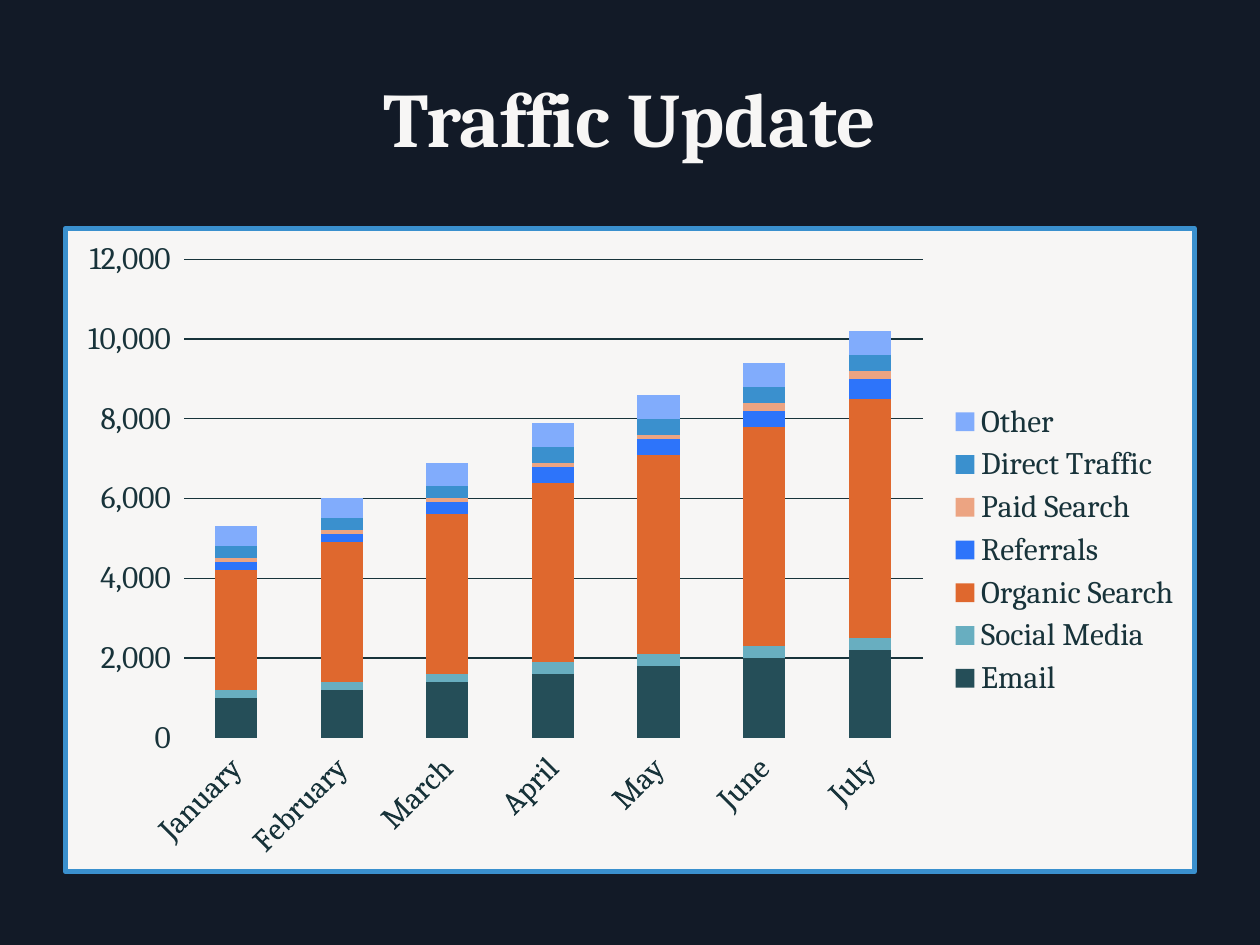
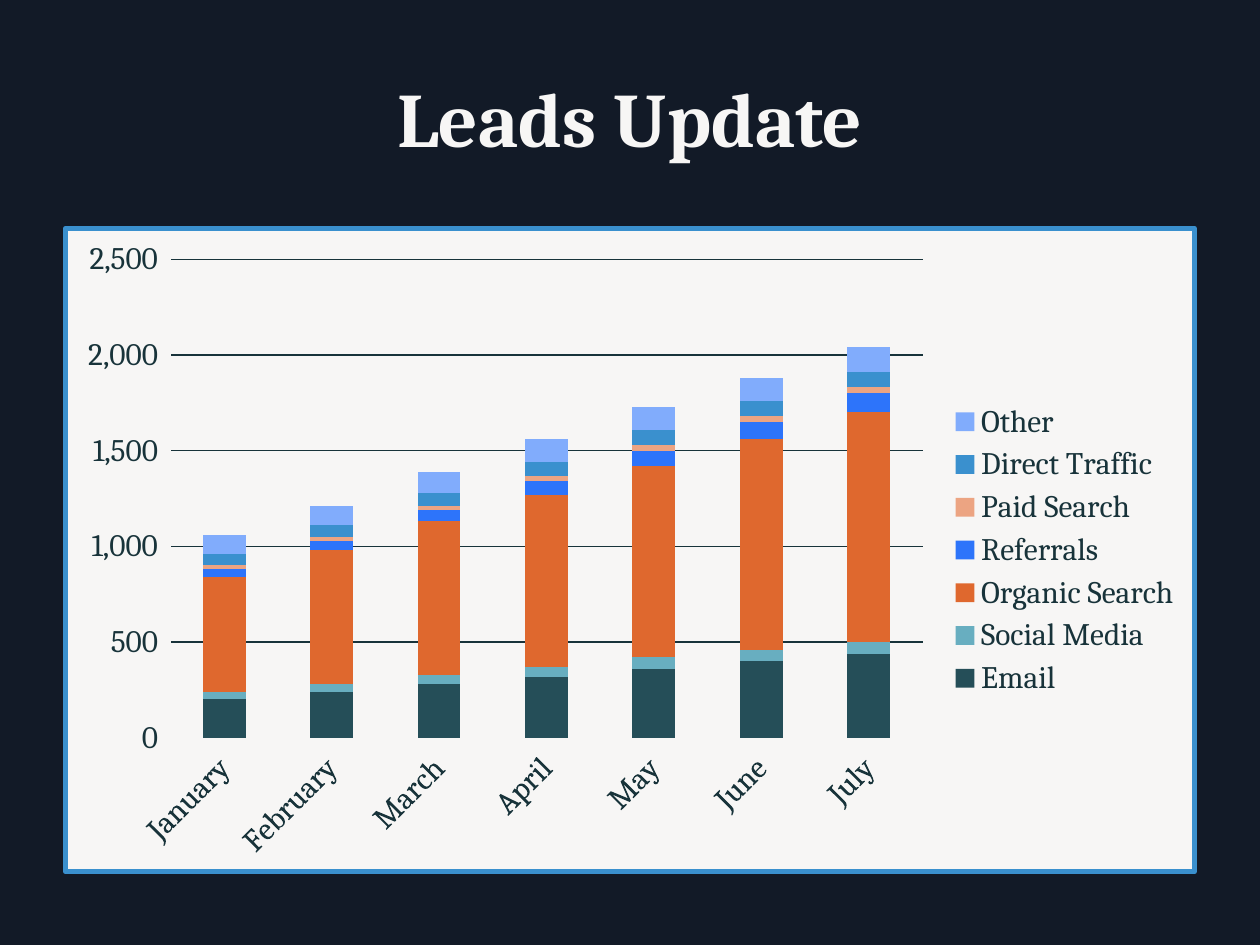
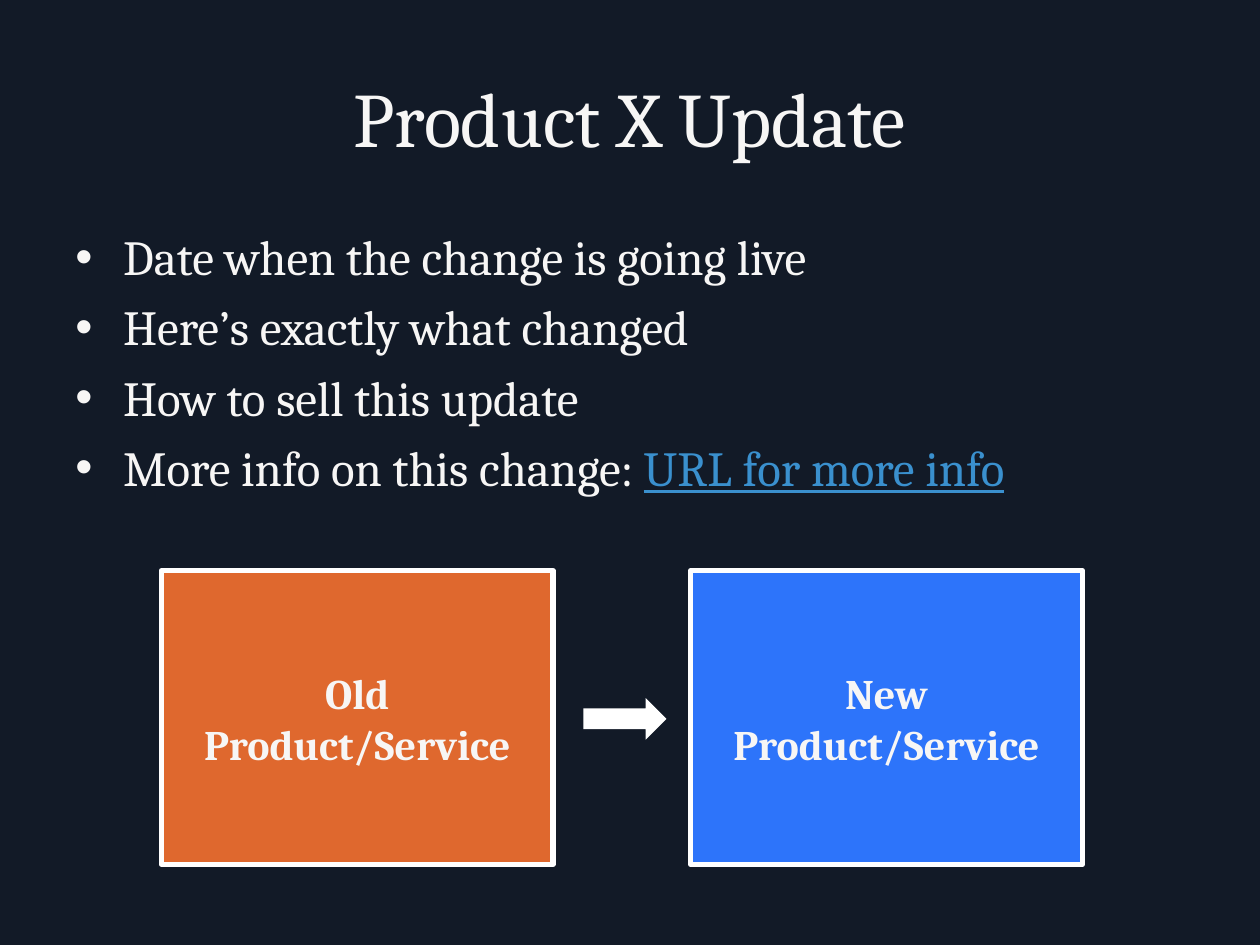
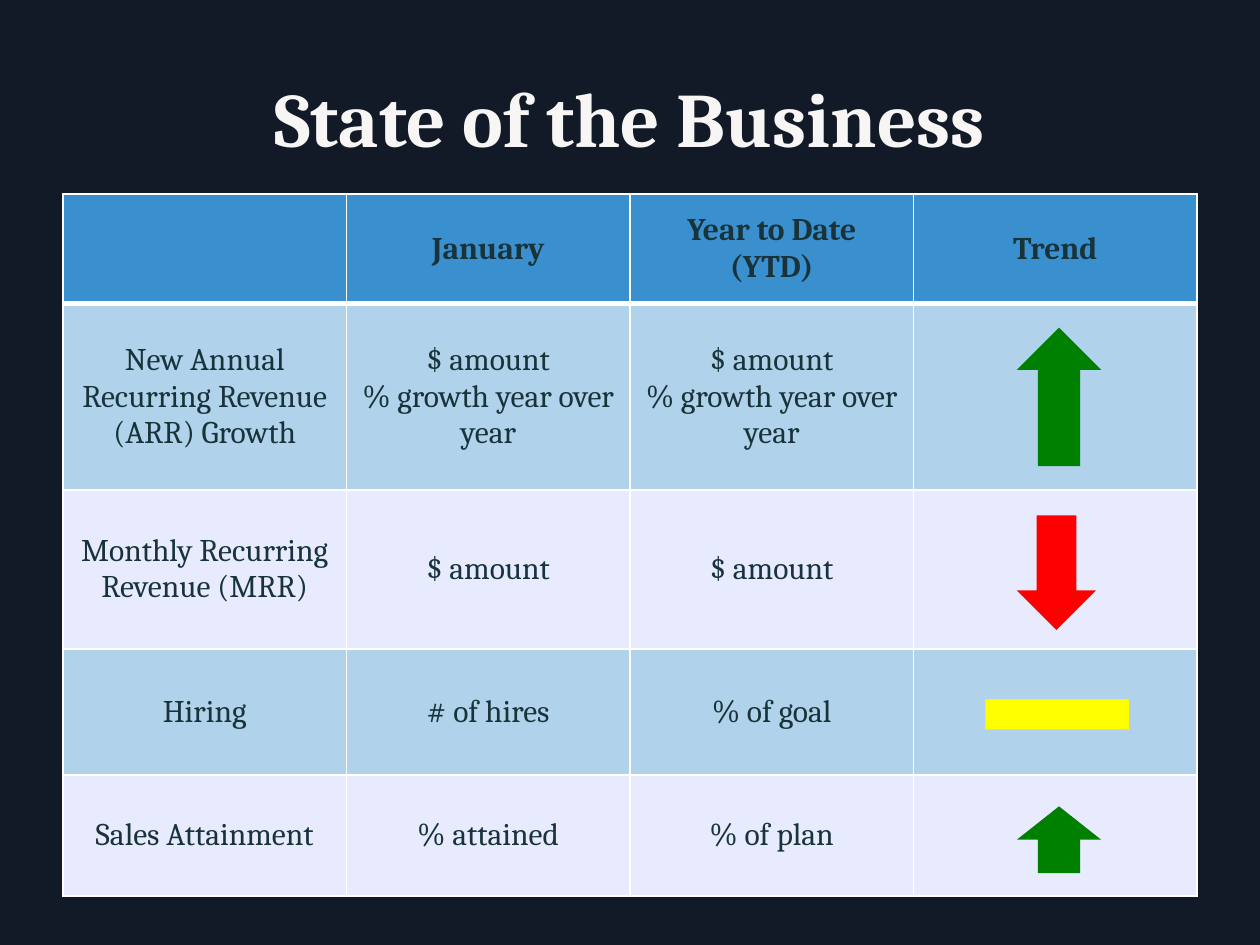
from dataclasses import dataclass

from lxml import etree
from pptx import Presentation
from pptx.chart.data import CategoryChartData
from pptx.dml.color import RGBColor
from pptx.enum.chart import XL_CHART_TYPE as ChartType
from pptx.enum.chart import XL_LEGEND_POSITION as LegendPosition
from pptx.enum.chart import XL_TICK_MARK as TickMark
from pptx.enum.shapes import MSO_SHAPE as Shape
from pptx.enum.text import MSO_ANCHOR as Anchor
from pptx.enum.text import MSO_AUTO_SIZE as AutoSize
from pptx.enum.text import PP_ALIGN as Align
from pptx.oxml import parse_xml
from pptx.oxml.ns import nsdecls, qn
from pptx.util import Inches, Pt


@dataclass(frozen=True)
class Theme:
    font: str = "Cambria"
    night: str = "121A27"
    paper: str = "F7F6F5"
    ink: str = "18333A"
    sky: str = "3A90CE"
    orange: str = "DF682E"
    blue: str = "2D74FA"
    white: str = "FFFFFF"
    up: str = "008000"
    down: str = "FF0000"
    flat: str = "FFFF00"
    row_bands: tuple = ("B0D3EB", "E8EBFE")
    title_size: int = 44
    body_size: int = 28
    label_size: int = 24
    data_size: int = 18


THEME = Theme()
MARGIN, CONTENT_WIDTH = 0.5, 9
MONTHS = ("January", "February", "March", "April", "May", "June", "July")
CHANNEL_COLORS = {
    "Email": "254E58",
    "Social Media": "68AEC0",
    "Organic Search": THEME.orange,
    "Referrals": THEME.blue,
    "Paid Search": "ECA482",
    "Direct Traffic": THEME.sky,
    "Other": "81ACFC",
}
TRAFFIC = (
    (1000, 1200, 1400, 1600, 1800, 2000, 2200),
    (200, 200, 200, 300, 300, 300, 300),
    (3000, 3500, 4000, 4500, 5000, 5500, 6000),
    (200, 200, 300, 400, 400, 400, 500),
    (100, 100, 100, 100, 100, 200, 200),
    (300, 300, 300, 400, 400, 400, 400),
    (500, 500, 600, 600, 600, 600, 600),
)
LEADS = (
    (200, 240, 280, 320, 360, 400, 440),
    (40, 40, 50, 50, 60, 60, 60),
    (600, 700, 800, 900, 1000, 1100, 1200),
    (40, 50, 60, 70, 80, 90, 100),
    (20, 20, 20, 30, 30, 30, 30),
    (60, 60, 70, 70, 80, 80, 80),
    (100, 100, 110, 120, 120, 120, 130),
)
REVENUE = "$ amount\n% growth year over year"
METRICS = (
    ("", "January", "Year to Date (YTD)", "Trend"),
    ("New Annual Recurring Revenue (ARR) Growth", REVENUE, REVENUE, ""),
    ("Monthly Recurring Revenue (MRR)", "$ amount", "$ amount", ""),
    ("Hiring", "# of hires", "% of goal", ""),
    ("Sales Attainment", "% attained", "% of plan", ""),
)
METRIC_HEIGHTS = (0.87, 1.48, 1.26, 1, 0.96)


def rgb(color):
    return RGBColor.from_string(color)


def inches(box):
    return [Inches(length) for length in box]


class Deck:
    def __init__(self, theme):
        self.theme = theme
        self.prs = Presentation()
        self.prs.slide_width, self.prs.slide_height = Inches(10), Inches(7.5)
        self.slide = None

    def add_slide(self, title, bold=True):
        self.slide = self.prs.slides.add_slide(self.prs.slide_layouts[6])
        background = self.slide.background.fill
        background.solid()
        background.fore_color.rgb = rgb(self.theme.night)
        heading = self.text(title, (MARGIN, 0.3, CONTENT_WIDTH, 1.25), self.theme.title_size, bold)
        heading.vertical_anchor = Anchor.MIDDLE

    def style(self, font, size, color, bold=False):
        font.name, font.size, font.bold = self.theme.font, Pt(size), bold
        font.color.rgb = rgb(color)

    def text(self, content, box, size, bold=False, align=Align.CENTER):
        frame = self.slide.shapes.add_textbox(*inches(box)).text_frame
        frame.word_wrap = True
        frame.text = content
        for paragraph in frame.paragraphs:
            paragraph.alignment = align
            self.style(paragraph.font, size, self.theme.paper, bold)
        return frame

    def bullets(self, lines, box):
        frame = self.text("\n".join(lines), box, self.theme.body_size, align=Align.LEFT)
        for paragraph in frame.paragraphs:
            paragraph.space_before = Pt(6.5)
            properties = paragraph._p.get_or_add_pPr()
            properties.set("marL", str(Inches(0.38)))
            properties.set("indent", str(-Inches(0.38)))
            bullet_font = parse_xml(f'<a:buFont {nsdecls("a")} typeface="Arial"/>')
            bullet = parse_xml(f'<a:buChar {nsdecls("a")} char="•"/>')
            properties.find(qn("a:defRPr")).addprevious(bullet_font)
            bullet_font.addnext(bullet)
        return frame

    def shape(self, kind, box, fill, outlined=False):
        shape = self.slide.shapes.add_shape(kind, *inches(box))
        shape.shadow.inherit = False
        shape.fill.solid()
        shape.fill.fore_color.rgb = rgb(fill)
        if outlined:
            shape.line.color.rgb = rgb(self.theme.white)
            shape.line.width = Pt(3)
        else:
            shape.line.fill.background()

    def card(self, label, left, fill):
        self.shape(Shape.RECTANGLE, (left, 4.53, 3.11, 2.33), fill, outlined=True)
        caption = self.text(label, (left, 5.25, 3.11, 0.91), self.theme.label_size, bold=True)
        caption.auto_size = AutoSize.SHAPE_TO_FIT_TEXT

    def channel_chart(self, values):
        theme = self.theme
        data = CategoryChartData(number_format="#,##0")
        data.categories = MONTHS
        for channel, monthly in zip(CHANNEL_COLORS, values):
            data.add_series(channel, monthly)
        chart = self.slide.shapes.add_chart(
            ChartType.COLUMN_STACKED, *inches((MARGIN, 1.79, CONTENT_WIDTH, 5.15)), data
        ).chart
        self.style(chart.font, theme.data_size, theme.ink)
        chart.has_title = False
        chart.has_legend = True
        chart.legend.position = LegendPosition.RIGHT
        chart.legend.include_in_layout = False
        plot = chart.plots[0]
        plot.gap_width, plot.overlap, plot.vary_by_categories = 150, 100, False
        for series, color in zip(plot.series, CHANNEL_COLORS.values()):
            series.format.fill.solid()
            series.format.fill.fore_color.rgb = rgb(color)
        for axis in (chart.category_axis, chart.value_axis):
            axis.major_tick_mark = TickMark.OUTSIDE
            axis.format.line.color.rgb = rgb(theme.paper)
        axis = chart.value_axis
        axis.tick_labels.number_format = "#,##0"
        axis.tick_labels.number_format_is_linked = False
        axis.has_major_gridlines = True
        axis.major_gridlines.format.line.color.rgb = rgb(theme.ink)
        axis.major_gridlines.format.line.width = Pt(0.75)
        panel = parse_xml(
            f'<c:spPr {nsdecls("c", "a")}>'
            f'<a:solidFill><a:srgbClr val="{theme.paper}"/></a:solidFill>'
            f'<a:ln w="{Pt(3)}"><a:solidFill><a:srgbClr val="{theme.sky}"/></a:solidFill></a:ln>'
            "</c:spPr>"
        )
        chart.element.find(qn("c:txPr")).addprevious(panel)

    def borders(self, cell, widths):
        properties = cell._tc.get_or_add_tcPr()
        for side, width in widths.items():
            line = etree.SubElement(properties, qn(f"a:ln{side}"), w=str(Pt(width)))
            fill = etree.SubElement(line, qn("a:solidFill"))
            etree.SubElement(fill, qn("a:srgbClr"), val=self.theme.white)

    def table(self, rows, heights, top):
        theme = self.theme
        columns = len(rows[0])
        box = inches((MARGIN, top, CONTENT_WIDTH, sum(heights)))
        table = self.slide.shapes.add_table(len(rows), columns, *box).table
        for column in table.columns:
            column.width = Inches(CONTENT_WIDTH / columns)
        for r, (row, height) in enumerate(zip(rows, heights)):
            table.rows[r].height = Inches(height)
            header = r == 0
            widths = {"L": 1, "R": 1, "T": 3 if r == 1 else 1, "B": 3 if header else 1}
            for c, content in enumerate(row):
                cell = table.cell(r, c)
                self.borders(cell, widths)
                cell.fill.solid()
                cell.fill.fore_color.rgb = rgb(theme.sky if header else theme.row_bands[(r - 1) % 2])
                cell.vertical_anchor = Anchor.MIDDLE
                cell.text = content
                for paragraph in cell.text_frame.paragraphs:
                    paragraph.alignment = Align.CENTER
                    self.style(paragraph.font, theme.data_size, theme.ink, header)


def product_slide(deck):
    theme = deck.theme
    deck.add_slide("Product X Update", bold=False)
    details = deck.bullets(
        (
            "Date when the change is going live",
            "Here’s exactly what changed",
            "How to sell this update",
            "More info on this change: ",
        ),
        (MARGIN, 1.75, CONTENT_WIDTH, 4.95),
    )
    url = details.paragraphs[-1].add_run()
    url.text = "URL for more info"
    url.font.color.rgb = rgb(theme.sky)
    url.font.underline = True
    deck.card("Old Product/Service", 1.28, theme.orange)
    deck.card("New Product/Service", 5.48, theme.blue)
    deck.shape(Shape.RIGHT_ARROW, (4.63, 5.54, 0.66, 0.33), theme.white)


def business_slide(deck):
    theme = deck.theme
    deck.add_slide("State of the Business")
    deck.table(METRICS, METRIC_HEIGHTS, 1.54)
    trends = (
        (Shape.UP_ARROW, (8.07, 2.6, 0.67, 1.1), theme.up),
        (Shape.DOWN_ARROW, (8.07, 4.09, 0.63, 0.91), theme.down),
        (Shape.RECTANGLE, (7.82, 5.55, 1.14, 0.24), theme.flat),
        (Shape.UP_ARROW, (8.07, 6.4, 0.67, 0.53), theme.up),
    )
    for kind, box, color in trends:
        deck.shape(kind, box, color)


def main():
    deck = Deck(THEME)
    for title, values in (("Traffic Update", TRAFFIC), ("Leads Update", LEADS)):
        deck.add_slide(title)
        deck.channel_chart(values)
    product_slide(deck)
    business_slide(deck)
    deck.prs.save("out.pptx")


if __name__ == "__main__":
    main()
